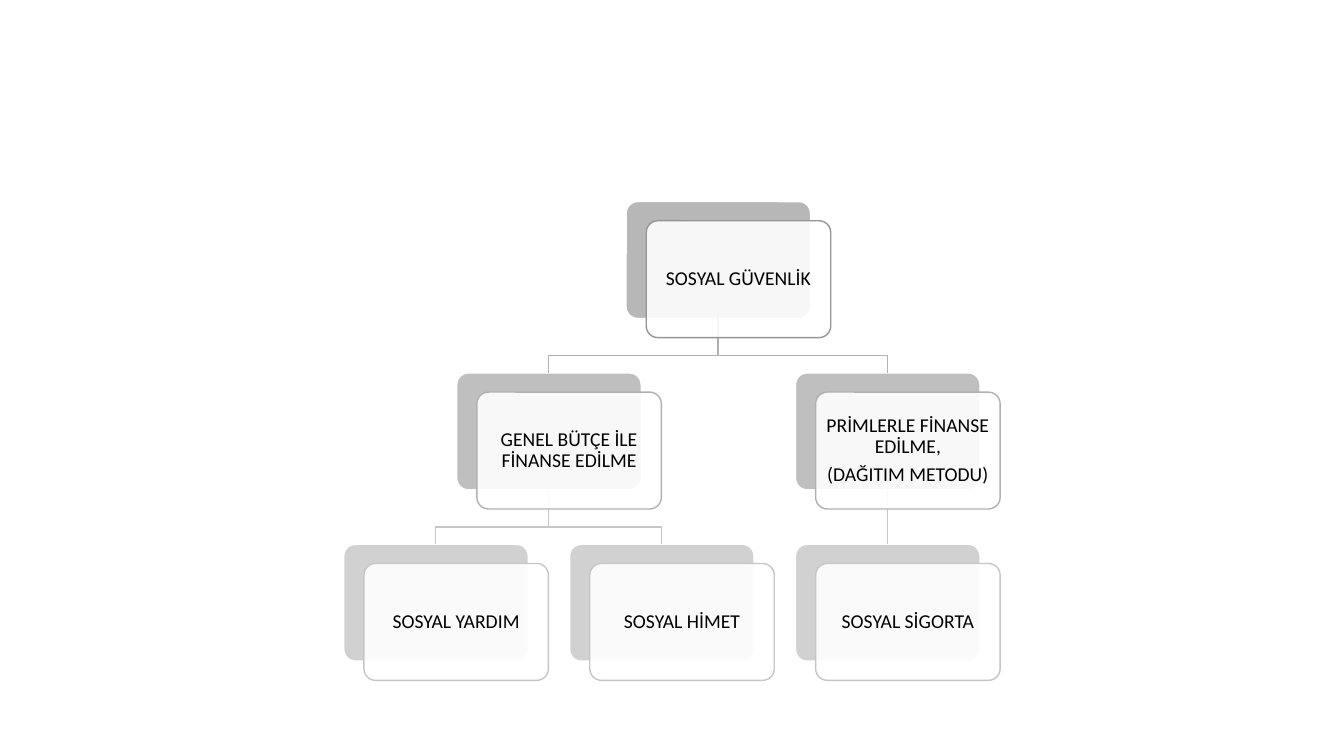
from lxml.etree import SubElement
from pptx import Presentation
from pptx.dml.color import RGBColor
from pptx.enum.shapes import MSO_CONNECTOR, MSO_SHAPE
from pptx.enum.text import MSO_ANCHOR, PP_ALIGN
from pptx.oxml.ns import qn
from pptx.util import Pt

PX = 9144  # EMU per px, 100 px to the inch
COLORS = {"white": "FFFFFF", "gray": "A5A5A5", "text": "000000",
          "level 0": "969696", "level 1": "B1B1B1", "level 2": "C6C6C6"}
CARD_W, CARD_H = 183, 116
LEFT, TOP = 341, 200
COLUMN_STEP, LEVEL_STEP = 112, 170
SHIFT_X, SHIFT_Y = 20, 19
BEND = 37
OPACITY = [80, 70, 50]

# name: (column, level, parent, text)
CARDS = {
    "security": (2.5, 0, None, "SOSYAL GÜVENLİK"),
    "budget": (1, 1, "security", "GENEL BÜTÇE İLE FİNANSE EDİLME"),
    "aid": (0, 2, "budget", "SOSYAL YARDIM"),
    "service": (2, 2, "budget", "SOSYAL HİMET"),
    "premiums": (4, 1, "security", "PRİMLERLE FİNANSE EDİLME,\n(DAĞITIM METODU)"),
    "insurance": (4, 2, "premiums", "SOSYAL SİGORTA"),
}


def set_line(shape, color):
    shape.line.color.rgb = RGBColor.from_string(COLORS[color])
    shape.line.width = Pt(1)


def add_card(left, top, fill, opacity, line):
    card = page.shapes.add_shape(MSO_SHAPE.ROUNDED_RECTANGLE, left * PX, top * PX,
                                 CARD_W * PX, CARD_H * PX)
    card.adjustments[0] = 0.1
    card.shadow.inherit = False
    card.fill.solid()
    card.fill.fore_color.rgb = RGBColor.from_string(COLORS[fill])
    color = card.fill._xPr.find(qn("a:solidFill"))[0]
    SubElement(color, qn("a:alpha")).set("val", str(opacity * 1000))
    set_line(card, line)
    return card


deck = Presentation()
deck.slide_width, deck.slide_height = 1333 * PX, 750 * PX
page = deck.slides.add_slide(deck.slide_layouts[6])

# Gray back cards
places, backs = {}, {}
for name, (column, level, parent, text) in CARDS.items():
    places[name] = (int(LEFT + column * COLUMN_STEP), TOP + level * LEVEL_STEP)
    backs[name] = add_card(*places[name], "gray", OPACITY[level], "white")

# Lines from each parent to its children
for name, (column, level, parent, text) in CARDS.items():
    if parent is None:
        continue
    start_x, end_x = (places[key][0] + CARD_W // 2 for key in (parent, name))
    start_y, end_y = places[parent][1] + CARD_H, places[name][1]
    if start_x == end_x:
        link = page.shapes.add_connector(MSO_CONNECTOR.STRAIGHT, start_x * PX, start_y * PX,
                                         end_x * PX, end_y * PX)
        link.begin_connect(backs[parent], 2)
        link.end_connect(backs[name], 0)
        SubElement(link._element.spPr, qn("a:effectLst"))
        set_line(link, f"level {level}")
    else:
        bend_y = start_y + BEND
        outline = page.shapes.build_freeform(start_x, start_y, scale=PX)
        outline.add_line_segments([(start_x, bend_y), (end_x, bend_y), (end_x, end_y)],
                                  close=False)
        link = outline.convert_to_shape()
        link.fill.background()
        link.shadow.inherit = False
        set_line(link, f"level {level}")

# White front cards with the text
for name, (column, level, parent, text) in CARDS.items():
    left, top = places[name]
    card = add_card(left + SHIFT_X, top + SHIFT_Y, "white", 90, f"level {level}")
    frame = card.text_frame
    frame.word_wrap = True
    frame.vertical_anchor = MSO_ANCHOR.MIDDLE
    frame.margin_left = frame.margin_right = frame.margin_top = frame.margin_bottom = 6 * PX
    frame.text = text
    for para in frame.paragraphs:
        para.alignment = PP_ALIGN.CENTER
        para.line_spacing = 0.9
        para.space_after = Pt(5)
        para.font.name = "Calibri"
        para.font.size = Pt(14)
        for span in para.runs:
            span.font.name = "Calibri"
            span.font.size = Pt(14)
            span.font.color.rgb = RGBColor.from_string(COLORS["text"])

deck.save("out.pptx")
